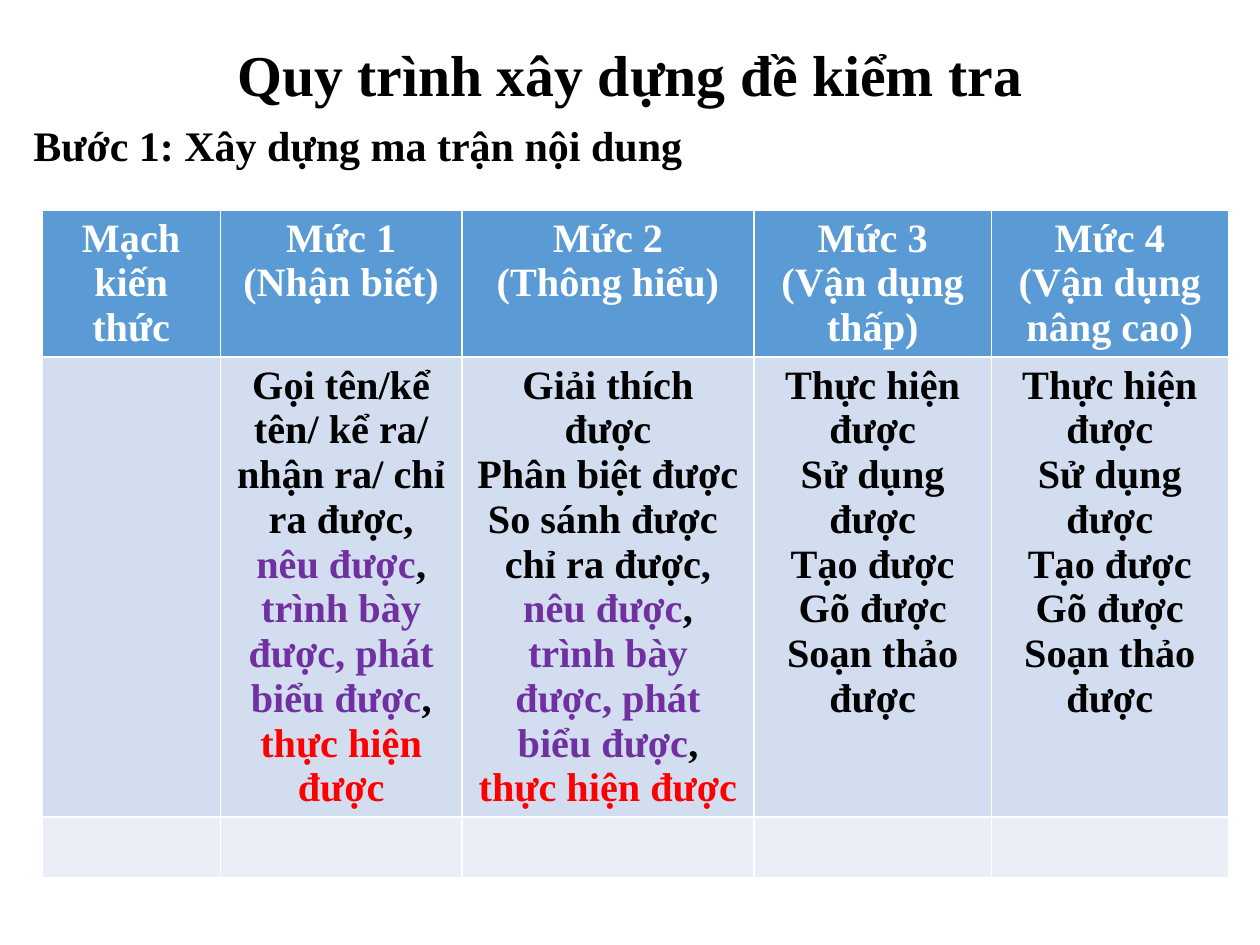
import pptx
import pptx.dml.color
import pptx.enum.text
import pptx.util

Pt = pptx.util.Pt
ALIGN = pptx.enum.text.PP_ALIGN
ANCHOR = pptx.enum.text.MSO_ANCHOR

COLORS = {
    "black": "000000",
    "white": "FFFFFF",
    "purple": "7030A0",
    "red": "FF0000",
    "header": "5B9BD5",
    "band": "D2DEEF",
    "light band": "EAEFF7",
}


def color(name):
    return pptx.dml.color.RGBColor.from_string(COLORS[name])


def write(text_frame, paragraphs, size, alignment, default="black"):
    """Each paragraph is a string or a list of (text, colour) runs."""
    text_frame.word_wrap = True
    for index, content in enumerate(paragraphs):
        paragraph = text_frame.paragraphs[0] if index == 0 else text_frame.add_paragraph()
        paragraph.alignment = alignment
        paragraph.font.name = "Times New Roman"
        paragraph.font.size = Pt(size)
        paragraph.font.bold = True
        runs = [(content, default)] if isinstance(content, str) else content
        for text, run_color in runs:
            run = paragraph.add_run()
            run.text = text
            run.font.color.rgb = color(run_color)


presentation = pptx.Presentation()
presentation.slide_width = Pt(720)
presentation.slide_height = Pt(540)
slide = presentation.slides.add_slide(presentation.slide_layouts[6])

# Level matrix
shared_verbs = [
    ("nêu được", "purple"),
    (", ", "black"),
    ("trình bày được, phát biểu được", "purple"),
    (", ", "black"),
    ("thực hiện được", "red"),
]
practice = ["Thực hiện được", "Sử dụng được", "Tạo được", "Gõ được", "Soạn thảo được"]
rows = [
    [
        ["Mạch kiến thức"],
        ["Mức 1", "(Nhận biết)"],
        ["Mức 2", "(Thông hiểu)"],
        ["Mức 3", "(Vận dụng thấp)"],
        ["Mức 4", "(Vận dụng nâng cao)"],
    ],
    [
        [],
        [[("Gọi tên/kể tên/ kể ra/ nhận ra/ chỉ ra được, ", "black")] + shared_verbs],
        [
            "Giải thích được",
            "Phân biệt được",
            "So sánh được ",
            [("chỉ ra được, ", "black")] + shared_verbs,
        ],
        practice,
        practice,
    ],
    [[]] * 5,
]
column_widths = [102, 138, 167, 135.5, 135.5]
row_heights = [83, 261, 34.5]
row_styles = [("header", "white"), ("band", "black"), ("light band", "black")]

table = slide.shapes.add_table(
    len(rows), len(column_widths), Pt(24), Pt(120), Pt(sum(column_widths)), Pt(sum(row_heights))
).table
for column, width in zip(table.columns, column_widths):
    column.width = Pt(width)
for row, height, contents, (fill, text_color) in zip(table.rows, row_heights, rows, row_styles):
    row.height = Pt(height)
    for cell, paragraphs in zip(row.cells, contents):
        cell.fill.solid()
        cell.fill.fore_color.rgb = color(fill)
        write(cell.text_frame, paragraphs, 23, ALIGN.CENTER, text_color)

# Title
title = slide.shapes.add_textbox(Pt(50), Pt(6), Pt(620), Pt(77))
title.text_frame.vertical_anchor = ANCHOR.MIDDLE
write(title.text_frame, ["Quy trình xây dựng đề kiểm tra"], 33, ALIGN.CENTER)
title.text_frame.paragraphs[0].line_spacing = 0.9

# Step heading
step = slide.shapes.add_textbox(Pt(12), Pt(65), Pt(468), Pt(36))
write(step.text_frame, ["Bước 1: Xây dựng ma trận nội dung"], 24, ALIGN.LEFT)

presentation.save("out.pptx")
